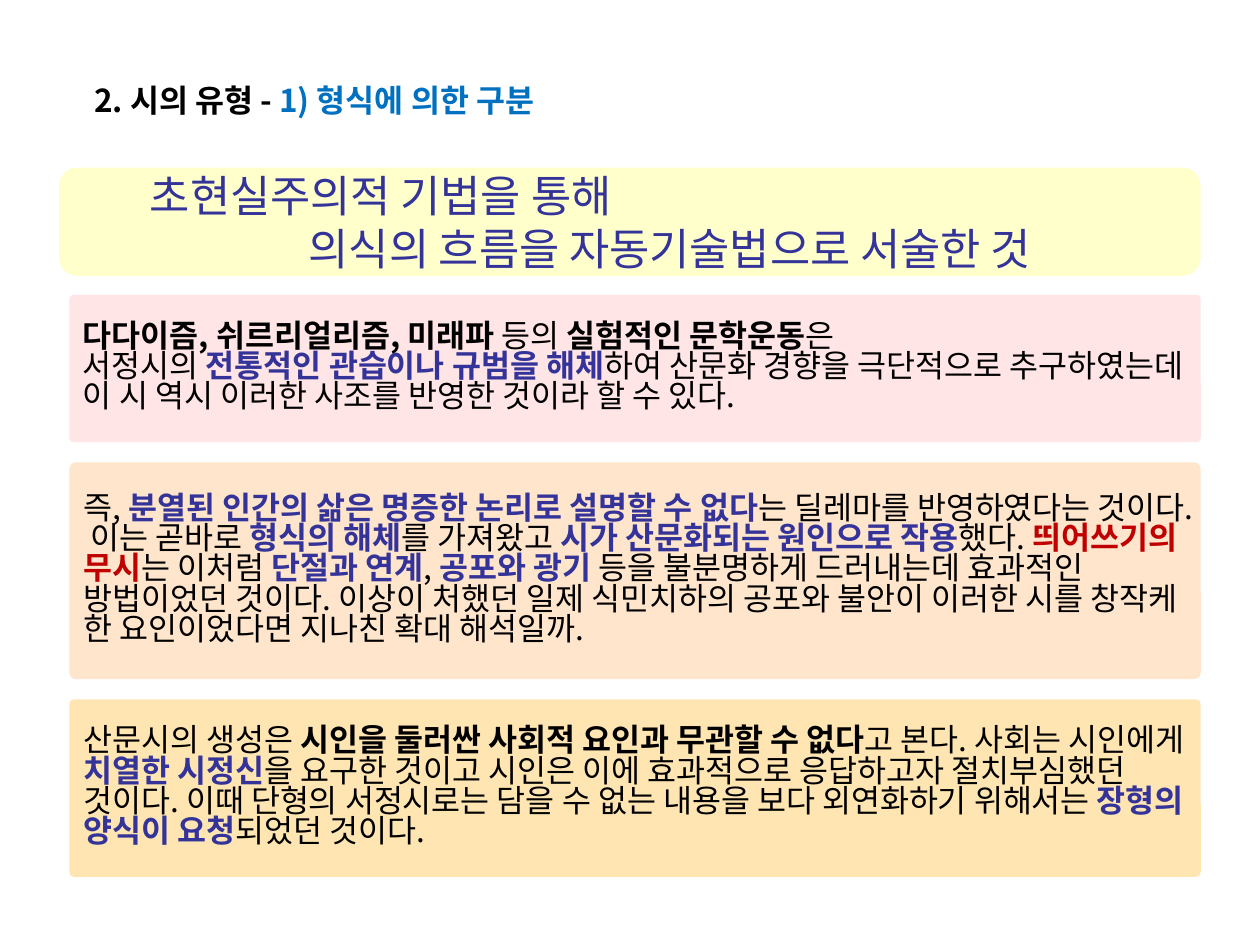
from lxml import etree
from pptx import Presentation, util as u
from pptx.dml.color import RGBColor
from pptx.enum import shapes, text
from pptx.oxml.ns import qn

# Content: each span is (words, style)
HEAD = [("2. 시의 유형 - ", "bold"), ("1) 형식에 의한 구분", "topic")]
TITLE = [  # (line, indent in inches)
    ("초현실주의적 기법을 통해", 0.58),
    ("의식의 흐름을 자동기술법으로 서술한 것", 1.84),
]
CARDS = [  # (fill, height, paragraphs)
    ("FFCCCC", 1.17, [
        [("다다이즘, 쉬르리얼리즘, 미래파", "bold"), (" 등의 ", "plain"),
         ("실험적인 문학운동", "bold"), ("은", "plain")],
        [("서정시의 ", "plain"), ("전통적인 관습이나 규범을 해체", "key"),
         ("하여 산문화 경향을 극단적으로 추구하였는데 이 시 역시 "
          "이러한 사조를 반영한 것이라 할 수 있다.", "plain")],
    ]),
    ("FFCC99", 1.72, [
        [("즉, ", "plain"),
         ("분열된 인간의 삶은 명증한 논리로 설명할 수 없다", "key"),
         ("는 딜레마를 반영하였다는 것이다. 이는 곧바로 ", "plain"),
         ("형식의 해체", "key"), ("를 가져왔고 ", "plain"),
         ("시가 산문화되는 원인으로 작용", "key"), ("했다. ", "plain"),
         ("띄어쓰기의 무시", "alert"), ("는 이처럼 ", "plain"),
         ("단절과 연계", "key"), (", ", "plain"), ("공포와 광기", "key"),
         (" 등을 불분명하게 드러내는데 효과적인 방법이었던 것이다. "
          "이상이 처했던 일제 식민치하의 공포와 불안이 이러한 시를 "
          "창작케 한 요인이었다면 지나친 확대 해석일까.", "plain")],
    ]),
    ("FFCC66", 1.41, [
        [("산문시의 생성은 ", "plain"),
         ("시인을 둘러싼 사회적 요인과 무관할 수 없다", "bold"),
         ("고 본다. 사회는 시인에게 ", "plain"), ("치열한 시정신", "key"),
         ("을 요구한 것이고 시인은 이에 효과적으로 응답하고자 "
          "절치부심했던 것이다. 이때 단형의 서정시로는 담을 수 없는 "
          "내용을 보다 외연화하기 위해서는 ", "plain"),
         ("장형의 양식이 요청", "key"), ("되었던 것이다.", "plain")],
    ]),
]

THEME = {
    "font": "Noto Sans CJK KR", "body": 18, "title": 25,
    "band": "FFFFCC", "alpha": 50,
    "style": {  # colour, bold
        "plain": ("000000", False), "bold": ("000000", True),
        "key": ("333399", True), "title": ("333399", False),
        "topic": ("0070C0", True), "alert": ("C00000", True),
    },
}

# Layout in inches
WIDE, HIGH = 10, 7.5
RIGHT = 9.53
LEFT, TOP, GAP = 0.55, 2.34, 0.16


def write(para, spans, size):
    font = para.font
    font.size, font.name = u.Pt(size), THEME["font"]
    east = etree.SubElement(font._element, qn("a:ea"))
    east.set("typeface", THEME["font"])
    for words, style in spans:
        run = para.add_run()
        run.text = words
        color, bold = THEME["style"][style]
        run.font.color.rgb = RGBColor.from_string(color)
        run.font.bold = bold


def panel(slide, box, fill, alpha=None, curve=None):
    shape = slide.shapes.add_shape(
        shapes.MSO_SHAPE.ROUNDED_RECTANGLE, *map(u.Inches, box))
    shape.shadow.inherit = False
    shape.line.fill.background()
    shape.fill.solid()
    shape.fill.fore_color.rgb = RGBColor.from_string(fill)
    if alpha is not None:
        tint = shape._element.spPr.find(".//" + qn("a:srgbClr"))
        etree.SubElement(tint, qn("a:alpha")).set("val", str(alpha * 1000))
    if curve is not None:
        shape.adjustments[0] = curve
    frame = shape.text_frame
    frame.word_wrap = True
    frame.vertical_anchor = text.MSO_ANCHOR.MIDDLE
    return frame


def lines(frame, count):
    return [frame.paragraphs[0]] + [
        frame.add_paragraph() for _ in range(count - 1)]


def main():
    deck = Presentation()
    deck.slide_width, deck.slide_height = u.Inches(WIDE), u.Inches(HIGH)
    slide = deck.slides.add_slide(deck.slide_layouts[6])

    # Section heading
    head = slide.shapes.add_textbox(*map(u.Inches, (0.65, 0.59, 4.58, 0.4)))
    head.text_frame.word_wrap = True
    write(head.text_frame.paragraphs[0], HEAD, THEME["body"])

    # Title band with stepped lines
    band = panel(slide, (0.47, 1.33, RIGHT - 0.47, 0.86), THEME["band"])
    for para, (words, indent) in zip(lines(band, len(TITLE)), TITLE):
        para.alignment = text.PP_ALIGN.JUSTIFY
        para._p.get_or_add_pPr().set("marL", str(u.Inches(indent)))
        write(para, [(words, "title")], THEME["title"])

    # Cards stacked with equal gaps
    top = TOP
    for fill, high, paras in CARDS:
        card = panel(slide, (LEFT, top, RIGHT - LEFT, high), fill,
                     THEME["alpha"], 0.03)
        for para, spans in zip(lines(card, len(paras)), paras):
            para.alignment = text.PP_ALIGN.LEFT
            para.line_spacing = 0.8
            write(para, spans, THEME["body"])
        top += high + GAP

    deck.save("out.pptx")


if __name__ == "__main__":
    main()
